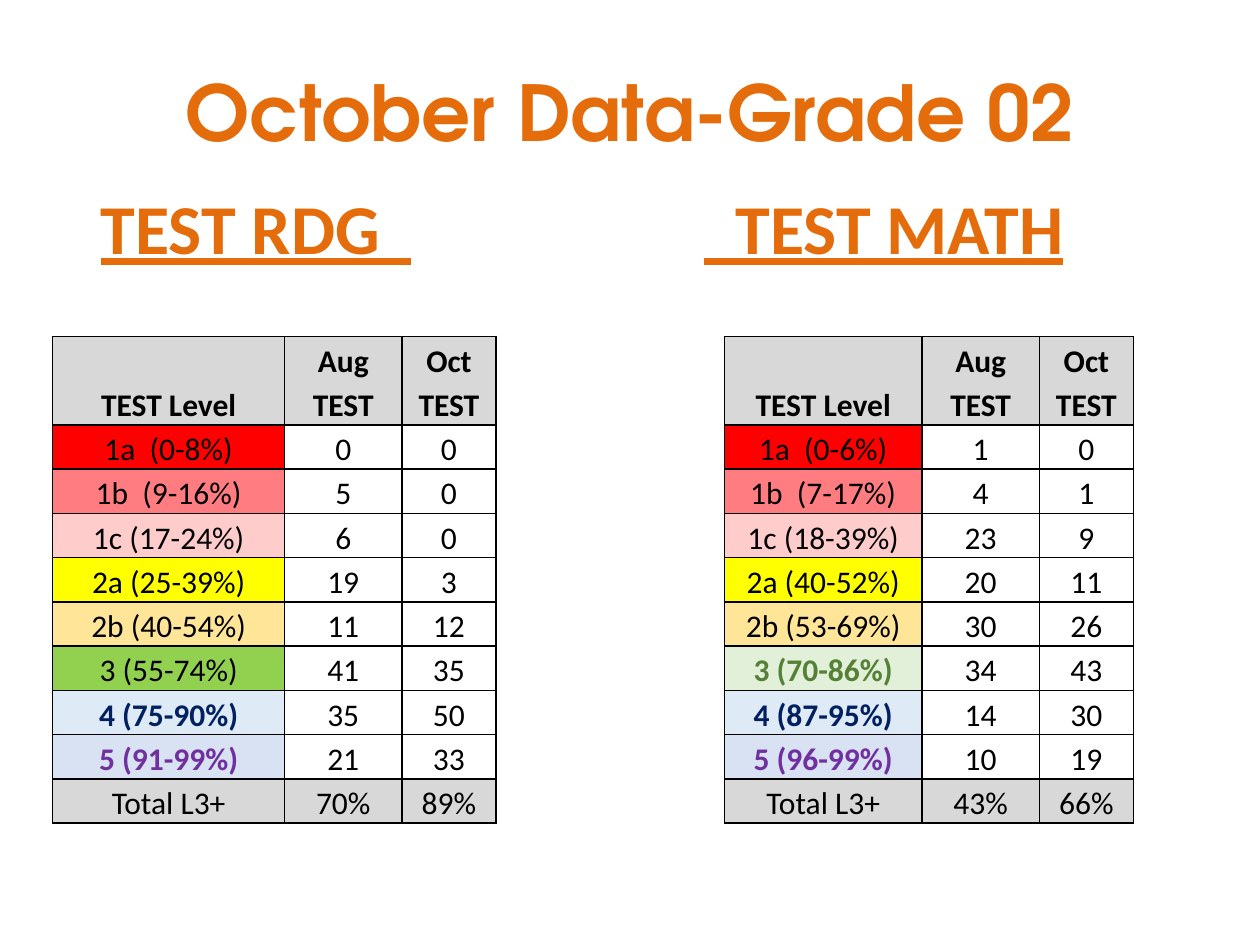
from dataclasses import dataclass

from lxml.etree import SubElement
from pptx import Presentation
from pptx.dml.color import RGBColor
from pptx.enum.text import MSO_ANCHOR, MSO_AUTO_SIZE, PP_ALIGN
from pptx.oxml.ns import qn
from pptx.util import Cm, Pt

HUES = {
    "orange": "E46C0A", "black": "000000", "white": "FFFFFF", "grey": "D8D8D8",
    "red": "FF0000", "coral": "FF7C80", "pink": "FFCCCC", "yellow": "FFFF00",
    "sand": "FFE598", "green": "92D050", "mint": "E2EFD9", "moss": "548135",
    "ice": "DEEAF6", "navy": "002060", "lilac": "D9E2F3", "purple": "7030A0",
}
ROW = 0.89


@dataclass
class Level:
    label: str
    aug: str
    oct: str
    fill: str
    ink: str = "black"


@dataclass
class Board:
    name: str
    start: float
    left: float
    first: float
    levels: list[Level]
    total: tuple[str, str]


BOARDS = [
    Board("TEST RDG  ", 1.78, 1.06, 4.68, [
        Level("1a  (0-8%)", "0", "0", "red"),
        Level("1b  (9-16%)", "5", "0", "coral"),
        Level("1c (17-24%)", "6", "0", "pink"),
        Level("2a (25-39%)", "19", "3", "yellow"),
        Level("2b (40-54%)", "11", "12", "sand"),
        Level("3 (55-74%)", "41", "35", "green"),
        Level("4 (75-90%)", "35", "50", "ice", "navy"),
        Level("5 (91-99%)", "21", "33", "lilac", "purple"),
    ], ("70%", "89%")),
    Board("  TEST MATH", 13.94, 14.6, 3.99, [
        Level("1a  (0-6%)", "1", "0", "red"),
        Level("1b  (7-17%)", "4", "1", "coral"),
        Level("1c (18-39%)", "23", "9", "pink"),
        Level("2a (40-52%)", "20", "11", "yellow"),
        Level("2b (53-69%)", "30", "26", "sand"),
        Level("3 (70-86%)", "34", "43", "mint", "moss"),
        Level("4 (87-95%)", "14", "30", "ice", "navy"),
        Level("5 (96-99%)", "10", "19", "lilac", "purple"),
    ], ("43%", "66%")),
]


def hue(name: str) -> RGBColor:
    return RGBColor.from_string(HUES[name])


def write(para, text: str, size: float, ink: str, bold: bool = True,
          face: str = "Calibri", under: bool = False) -> None:
    run = para.add_run()
    run.text = text
    font = run.font
    font.name, font.size, font.bold, font.underline = face, Pt(size), bold, under
    font.color.rgb = hue(ink)


def place(shape, left: float, top: float, width: float, height: float) -> None:
    shape.left, shape.top = Cm(left), Cm(top)
    shape.width, shape.height = Cm(width), Cm(height)
    shape.text_frame.auto_size = MSO_AUTO_SIZE.NONE


def frame(cell) -> None:
    props = cell._tc.get_or_add_tcPr()
    for side in ("lnL", "lnR", "lnT", "lnB"):
        line = SubElement(props, qn(f"a:{side}"), w=str(Pt(1)))
        paint = SubElement(line, qn("a:solidFill"))
        SubElement(paint, qn("a:srgbClr"), val=HUES["black"])


def style(cell, text: str, fill: str, ink: str = "black", bold: bool = False) -> None:
    frame(cell)
    cell.fill.solid()
    cell.fill.fore_color.rgb = hue(fill)
    cell.vertical_anchor = MSO_ANCHOR.BOTTOM
    cell.margin_left = cell.margin_right = Cm(0.18)
    cell.margin_top = cell.margin_bottom = Cm(0)
    para = cell.text_frame.paragraphs[0]
    para.alignment = PP_ALIGN.CENTER
    para.line_spacing = 1.15
    write(para, text, 18, ink, bold)


def draw(slide, board: Board) -> None:
    widths = [board.first, 2.36, 1.9]
    count = len(board.levels) + 2
    table = slide.shapes.add_table(
        count, len(widths), Cm(board.left), Cm(6.78),
        Cm(sum(widths)), Cm(ROW * (count + 1))).table
    for col, width in zip(table.columns, widths):
        col.width = Cm(width)
    for row in table.rows:
        row.height = Cm(ROW)
    table.rows[0].height = Cm(2 * ROW)
    for col, text in enumerate(("TEST Level", "Aug TEST", "Oct TEST")):
        style(table.cell(0, col), text, "grey", bold=True)
    for row, level in enumerate(board.levels, 1):
        style(table.cell(row, 0), level.label, level.fill, level.ink,
              level.ink != "black")
        style(table.cell(row, 1), level.aug, "white")
        style(table.cell(row, 2), level.oct, "white")
    for col, text in enumerate(("Total L3+", *board.total)):
        style(table.cell(count - 1, col), text, "grey")


def head(slide) -> None:
    title = slide.shapes.title
    place(title, 1.27, 0.64, 22.86, 3.18)
    title.text_frame.vertical_anchor = MSO_ANCHOR.MIDDLE
    para = title.text_frame.paragraphs[0]
    para.alignment = PP_ALIGN.CENTER
    write(para, "October Data-Grade 02", 44, "orange", face="TeX Gyre Adventor")


def label(body, board: Board) -> None:
    place(body, board.start, 3.59, 10, 2.2)
    para = body.text_frame.paragraphs[0]
    props = para._p.get_or_add_pPr()
    props.set("marL", "0")
    props.set("indent", "0")
    SubElement(props, qn("a:buNone"))
    para.space_before = Pt(0)
    write(para, board.name, 40, "orange", under=True)


def main() -> None:
    deck = Presentation()
    deck.slide_width, deck.slide_height = Cm(25.4), Cm(19.05)
    slide = deck.slides.add_slide(deck.slide_layouts[3])
    head(slide)
    for slot, board in enumerate(BOARDS, 1):
        label(slide.placeholders[slot], board)
        draw(slide, board)
    deck.save("out.pptx")


if __name__ == "__main__":
    main()
